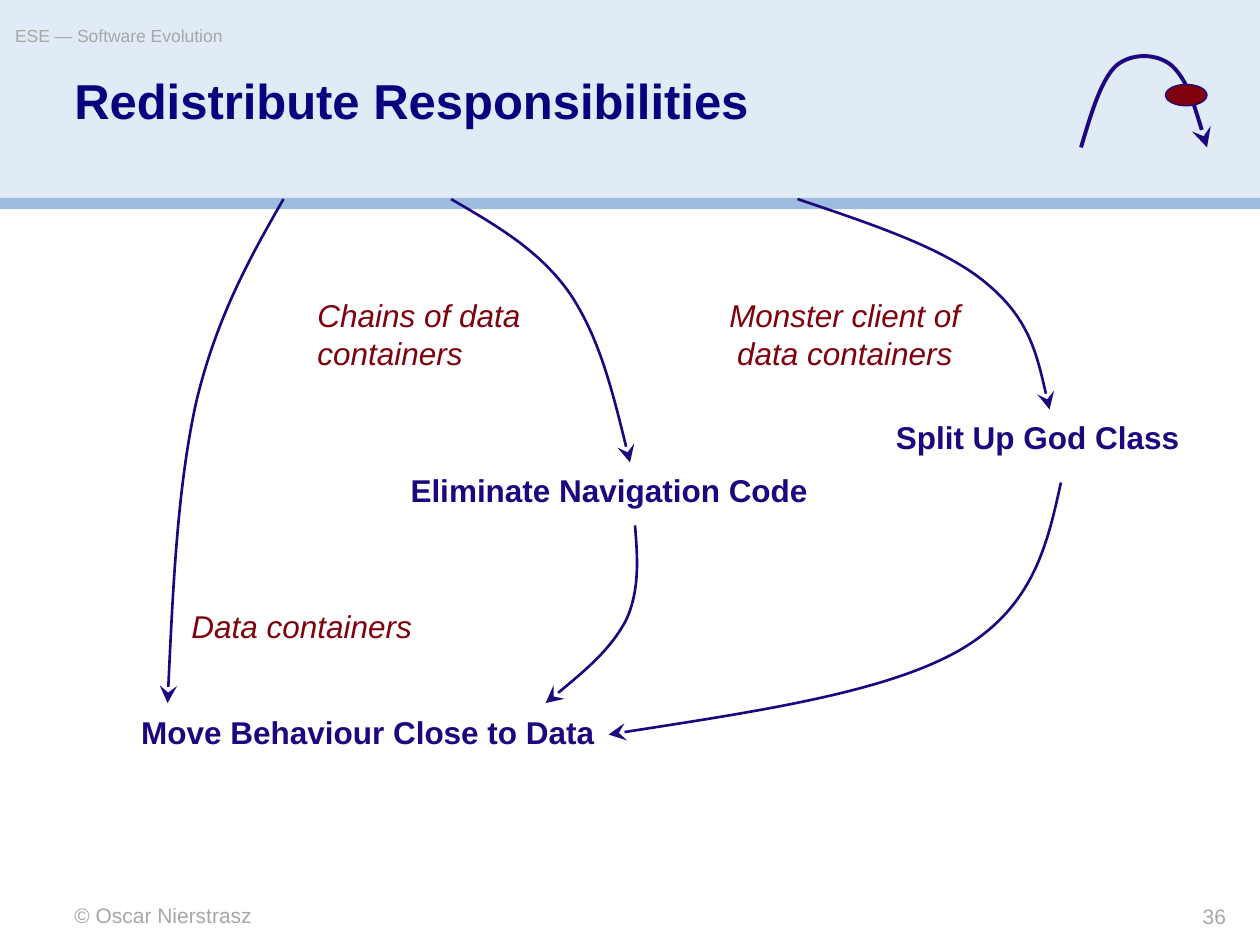
import pptx
import pptx.util
import pptx.dml.color
import pptx.enum.shapes
import pptx.enum.text
import pptx.oxml
import pptx.oxml.ns

W, H = 10, 7.5
NAVY, MAROON, GREY = "1E067F", "7F010D", "A7A7A7"
BAND_BOTTOM = 1.58

# text, left, top, width, height, style
PLAIN_TEXTS = [
    ("ESE — Software Evolution", 0.12, 0.2, 5.9, 0.28, dict(size=10, color=GREY)),
    ("Redistribute Responsibilities", 0.59, 0.61, 8.83, 0.89,
     dict(size=28, color="0A017F", bold=True, spacing=0.9)),
    ("© Oscar Nierstrasz", 0.59, 7.16, 4.17, 0.2, dict(size=12, color=GREY)),
    ("36", 8.25, 7.17, 1.48, 0.2, dict(size=12, color=GREY, align="RIGHT")),
]
PATTERNS = [
    ("Eliminate Navigation Code", 3.16, 3.69, 3.35),
    ("Split Up God Class", 7.01, 3.27, 2.45),
    ("Move Behaviour Close to Data", 1.02, 5.61, 3.8),
]
PROBLEMS = [
    ("Chains of data\ncontainers", 2.42, 2.3, 1.81, "LEFT"),
    ("Monster client of\ndata containers", 5.64, 2.3, 2.13, "CENTER"),
    ("Data containers", 1.42, 4.77, 1.95, "LEFT"),
]
# start point, then three Bezier points for each section
FLOWS = [
    [(2.25, 1.58), (1.98, 2.05), (1.72, 2.52), (1.56, 3.18),
     (1.41, 3.85), (1.37, 4.72), (1.33, 5.58)],
    [(3.58, 1.58), (3.94, 1.79), (4.29, 1.99), (4.53, 2.34),
     (4.76, 2.69), (4.88, 3.18), (5, 3.67)],
    [(6.33, 1.58), (6.92, 1.78), (7.5, 1.97), (7.83, 2.25),
     (8.17, 2.53), (8.25, 2.89), (8.33, 3.25)],
    [(5.04, 4.17), (5.06, 4.42), (5.08, 4.68), (4.97, 4.92),
     (4.85, 5.15), (4.59, 5.37), (4.33, 5.58)],
    [(8.42, 3.83), (8.31, 4.33), (8.2, 4.83), (7.6, 5.17),
     (7.01, 5.5), (5.92, 5.66), (4.83, 5.83)],
]
JUMP = [(8.58, 1.17), (8.66, 0.9), (8.74, 0.63), (8.86, 0.52), (8.98, 0.42),
        (9.18, 0.42), (9.3, 0.52), (9.42, 0.63), (9.5, 0.9), (9.58, 1.17)]

prs = pptx.Presentation()
prs.slide_width, prs.slide_height = pptx.util.Inches(W), pptx.util.Inches(H)
shapes = prs.slides.add_slide(prs.slide_layouts[6]).shapes


def rgb(color):
    return pptx.dml.color.RGBColor.from_string(color)


def set_line(s, color, width):
    s.line.color.rgb = rgb(color)
    s.line.width = pptx.util.Pt(width)


def add_block(kind, box, fill):
    s = shapes.add_shape(kind, *map(pptx.util.Inches, box))
    s.shadow.inherit = False
    s.fill.solid()
    s.fill.fore_color.rgb = rgb(fill)
    s.line.fill.background()
    return s


def add_text(text, box, size, color, bold=False, italic=False, align="LEFT",
             spacing=None, label=False):
    """A label hugs its text; other text fills a box without margins."""
    tf = shapes.add_textbox(*map(pptx.util.Inches, box)).text_frame
    tf.word_wrap = not label
    if label:
        tf.auto_size = pptx.enum.text.MSO_AUTO_SIZE.SHAPE_TO_FIT_TEXT
        tf.vertical_anchor = pptx.enum.text.MSO_ANCHOR.MIDDLE
    else:
        tf.margin_left = tf.margin_top = tf.margin_right = tf.margin_bottom = 0
    for i, line in enumerate(text.split("\n")):
        p = tf.add_paragraph() if i else tf.paragraphs[0]
        p.alignment = getattr(pptx.enum.text.PP_ALIGN, align)
        p.line_spacing = spacing
        r = p.add_run()
        r.text = line
        r.font.name, r.font.size = "Arial", pptx.util.Pt(size)
        r.font.bold, r.font.italic = bold, italic
        r.font.color.rgb = rgb(color)


def add_curved_arrow(points, width):
    """Draw straight segments, then join each three into one Bezier section."""
    # the builder rounds to whole units, so it works in hundredths of an inch
    start, *rest = [(round(x * 100), round(y * 100)) for x, y in points]
    builder = shapes.build_freeform(*start, scale=pptx.util.Inches(0.01))
    builder.add_line_segments(rest, close=False)
    s = builder.convert_to_shape()
    s.shadow.inherit = False
    s.fill.background()
    set_line(s, NAVY, width)
    segments = s._element.xpath(".//a:lnTo")
    for i in range(0, len(segments), 3):
        curve = pptx.oxml.parse_xml(
            f"<a:cubicBezTo {pptx.oxml.ns.nsdecls('a')}/>")
        segments[i].addprevious(curve)
        for segment in segments[i:i + 3]:
            curve.append(segment[0])
            segment.getparent().remove(segment)
    s.line._get_or_add_ln().append(pptx.oxml.parse_xml(
        f"<a:tailEnd {pptx.oxml.ns.nsdecls('a')} type='stealth' w='lg' len='lg'/>"))


RECT = pptx.enum.shapes.MSO_SHAPE.RECTANGLE
add_block(RECT, (0, 0, W, BAND_BOTTOM), "E1EBF5")
add_block(RECT, (0, BAND_BOTTOM - 0.01, W, 0.09), "9CBDDE")
for text, *box, style in PLAIN_TEXTS:
    add_text(text, box, **style)
for text, x, y, w in PATTERNS:
    add_text(text, (x, y, w, 0.4), 18, NAVY, bold=True, align="CENTER", label=True)
for text, x, y, w, align in PROBLEMS:
    h = 0.4 + 0.3 * text.count("\n")
    add_text(text, (x, y, w, h), 18, MAROON, italic=True, align=align, label=True)
for flow in FLOWS:
    add_curved_arrow(flow, 1.5)
add_curved_arrow(JUMP, 2.25)
marker = add_block(pptx.enum.shapes.MSO_SHAPE.OVAL, (9.25, 0.67, 0.33, 0.17), MAROON)
set_line(marker, NAVY, 0.75)

prs.save("out.pptx")
